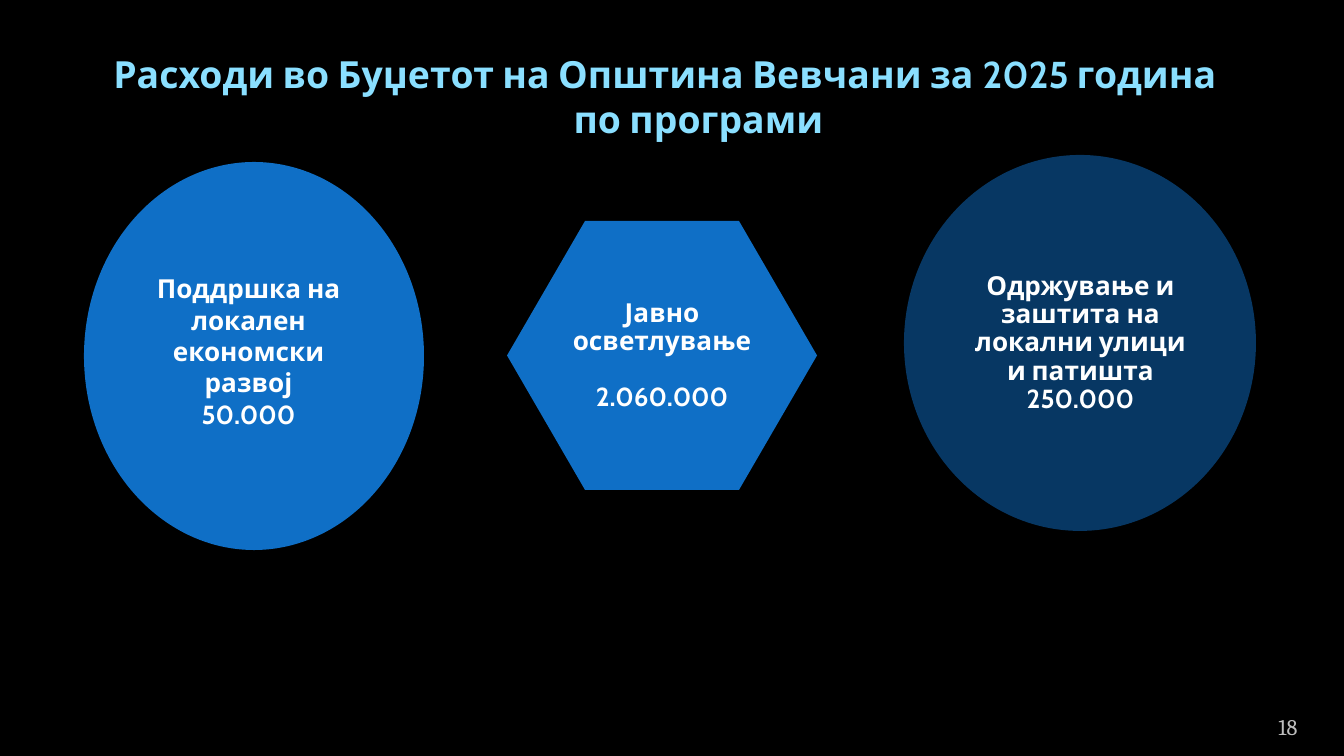
import pptx
import pptx.util
import pptx.dml.color
import pptx.enum.shapes
import pptx.enum.text
import pptx.oxml.ns
import lxml.etree

PX = 914400 / 134.4  # EMU in one px
COLORS = {
    "background": "000000",
    "shape": "0F6FC6",
    "text": "FFFFFF",
    "title": "8ADFFF",
    "number": "BDBDBD",
}
ANCHOR = pptx.enum.text.MSO_ANCHOR
SHAPE = pptx.enum.shapes.MSO_SHAPE


def box(values):
    return [pptx.util.Emu(round(value * PX)) for value in values]


def add_text(position, paragraphs, size, color, insets, anchor,
             font="Cabin", bold=True, line_spacing=1.0):
    text_frame = slide.shapes.add_textbox(*box(position)).text_frame
    text_frame.word_wrap = True
    text_frame.vertical_anchor = anchor
    side, edge = box(insets)
    text_frame.margin_left = text_frame.margin_right = side
    text_frame.margin_top = text_frame.margin_bottom = edge
    text_frame.text = "\n".join(paragraphs)
    for paragraph in text_frame.paragraphs:
        paragraph.alignment = pptx.enum.text.PP_ALIGN.CENTER
        paragraph.line_spacing = line_spacing
        for run in paragraph.runs:
            run.font.name = font
            run.font.size = pptx.util.Pt(size)
            run.font.bold = bold
            run.font.color.rgb = pptx.dml.color.RGBColor.from_string(COLORS[color])
    return text_frame


presentation = pptx.Presentation()
presentation.slide_width, presentation.slide_height = box((1344, 756))
slide = presentation.slides.add_slide(presentation.slide_layouts[6])
slide.background.fill.solid()
slide.background.fill.fore_color.rgb = pptx.dml.color.RGBColor.from_string(COLORS["background"])

# Slide number
add_text((1232, 707, 112, 40), ["18"], 12, "number", (0, 7), ANCHOR.BOTTOM,
         font="Cambria", bold=False)

# Programmes: preset, place, opacity in %, text place, inset, line spacing, text
programmes = [
    (SHAPE.HEXAGON, (507, 221, 310, 269), 100, (558, 266, 208, 180), 3, 0.9,
     ["Јавно осветлување", "2.060.000"]),
    (SHAPE.OVAL, (904, 155, 352, 376), 50, (956, 211, 249, 265), 8, 0.9,
     ["Одржување и заштита на локални улици и патишта 250.000"]),
    (SHAPE.OVAL, (84, 162, 340, 388), 100, (128, 214, 241, 274), 8, 1.0,
     ["Поддршка на локален економски развој", "50.000"]),
]
for preset, place, opacity, text_place, inset, spacing, paragraphs in programmes:
    shape = slide.shapes.add_shape(preset, *box(place))
    shape.shadow.inherit = False
    shape.line.fill.background()
    shape.fill.solid()
    shape.fill.fore_color.rgb = pptx.dml.color.RGBColor.from_string(COLORS["shape"])
    if opacity < 100:
        color_element = shape.fill._xPr.find(".//" + pptx.oxml.ns.qn("a:srgbClr"))
        alpha = lxml.etree.SubElement(color_element, pptx.oxml.ns.qn("a:alpha"))
        alpha.set("val", str(opacity * 1000))
    text_frame = add_text(text_place, paragraphs, 14, "text", (inset, inset),
                          ANCHOR.MIDDLE, line_spacing=spacing)
    if preset == SHAPE.HEXAGON:
        shape.adjustments[0] = 0.29
        # One line of air above the amount
        text_frame.paragraphs[1].space_before = pptx.util.Pt(15)

# Title with a hanging indent
title = add_text((83, 36, 1164, 118),
                 ["Расходи во Буџетот на Општина Вевчани за 2025 година по програми"],
                 20, "title", (13, 13), ANCHOR.BOTTOM)
properties = title.paragraphs[0]._p.get_or_add_pPr()
properties.set("marL", str(pptx.util.Inches(0.5)))
properties.set("indent", str(-pptx.util.Inches(0.5)))

presentation.save("out.pptx")
